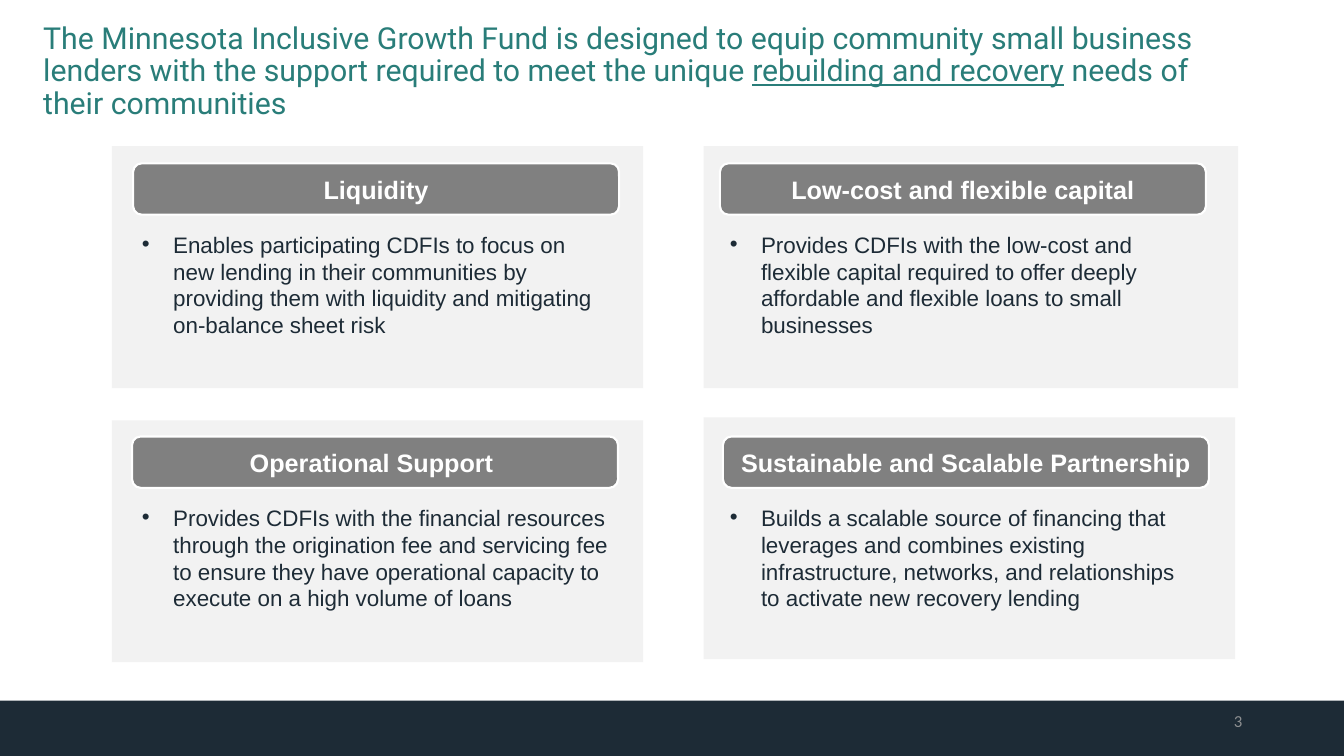
"""Build the slide on the four benefits of the Minnesota Inclusive Growth Fund."""
from dataclasses import dataclass

from lxml import etree
from pptx import Presentation
from pptx.dml.color import RGBColor
from pptx.enum.shapes import MSO_SHAPE as Shape
from pptx.enum.text import MSO_ANCHOR as Anchor, PP_ALIGN as Align
from pptx.oxml.ns import qn
from pptx.util import Inches, Pt


@dataclass(frozen=True)
class Theme:
    navy: str = "1D2B36"
    teal: str = "297D79"
    panel: str = "F2F2F2"
    header: str = "808080"
    white: str = "FFFFFF"
    number: str = "8D8F91"
    title_size: float = 21.6
    header_size: int = 18
    body_size: int = 16
    number_size: int = 12


theme = Theme()


def add_block(page, kind, place, fill):
    """Add a flat filled shape without an outline."""
    block = page.shapes.add_shape(kind, *map(Inches, place))
    block.shadow.inherit = False
    block.fill.solid()
    block.fill.fore_color.rgb = RGBColor.from_string(fill)
    block.line.fill.background()
    return block


def style_font(font, name, size, color):
    """Set the typeface, size and colour of a font."""
    font.name = name
    font.size = Pt(size)
    font.color.rgb = RGBColor.from_string(color)


deck = Presentation()
deck.slide_width, deck.slide_height = Inches(13.33), Inches(7.5)
page = deck.slides.add_slide(deck.slide_layouts[6])

add_block(page, Shape.RECTANGLE, (0, 6.95, 13.33, 0.55), theme.navy)

title = page.shapes.add_textbox(Inches(0.33), Inches(0.18), Inches(12.09), Inches(0.89))
title.text_frame.word_wrap = True
para = title.text_frame.paragraphs[0]
para.line_spacing = 0.9
title_parts = [
    ("The Minnesota Inclusive Growth Fund is designed to equip community small business "
     "lenders with the support required to meet the unique ", False),
    ("rebuilding and recovery", True),
    (" needs of their communities", False),
]
for words, underlined in title_parts:
    span = para.add_run()
    span.text = words
    style_font(span.font, "Roboto", theme.title_size, theme.teal)
    span.font.underline = underlined

number = page.shapes.add_textbox(Inches(9.42), Inches(6.95), Inches(3), Inches(0.4))
number.text_frame.word_wrap = True
number.text_frame.vertical_anchor = Anchor.MIDDLE
para = number.text_frame.paragraphs[0]
para.text = "3"
para.alignment = Align.RIGHT
style_font(para.runs[0].font, "Calibri", theme.number_size, theme.number)

cards = [
    ("Liquidity",
     "Enables participating CDFIs to focus on new lending in their communities by "
     "providing them with liquidity and mitigating on-balance sheet risk",
     (1.11, 1.45, 5.27), (1.32, 1.62), (1.31, 2.24)),
    ("Low-cost and flexible capital",
     "Provides CDFIs with the low-cost and flexible capital required to offer deeply "
     "affordable and flexible loans to small businesses",
     (6.98, 1.45, 5.3), (7.14, 1.62), (7.14, 2.24)),
    ("Operational Support ",
     "Provides CDFIs with the financial resources through the origination fee and "
     "servicing fee to ensure they have operational capacity to execute on a high "
     "volume of loans",
     (1.11, 4.17, 5.27), (1.31, 4.33), (1.31, 4.95)),
    ("Sustainable and Scalable Partnership",
     "Builds a scalable source of financing that leverages and combines existing "
     "infrastructure, networks, and relationships to activate new recovery lending",
     (6.98, 4.14, 5.27), (7.17, 4.33), (7.14, 4.95)),
]
for heading, benefit, panel_place, header_corner, body_corner in cards:
    add_block(page, Shape.RECTANGLE, (*panel_place, 2.4), theme.panel)

    header = add_block(page, Shape.ROUNDED_RECTANGLE, (*header_corner, 4.82, 0.51), theme.header)
    header.adjustments[0] = 0.167
    header.line.color.rgb = RGBColor.from_string(theme.white)
    header.line.width = Pt(1.5)
    header.text_frame.word_wrap = True
    header.text_frame.vertical_anchor = Anchor.MIDDLE
    para = header.text_frame.paragraphs[0]
    para.text = heading
    para.alignment = Align.CENTER
    style_font(para.runs[0].font, "Arial", theme.header_size, theme.white)
    para.runs[0].font.bold = True

    body = page.shapes.add_textbox(*map(Inches, (*body_corner, 4.84, 1.18)))
    body.text_frame.word_wrap = True
    para = body.text_frame.paragraphs[0]
    para.text = benefit
    para.space_after = Pt(6)
    settings = para._p.get_or_add_pPr()
    settings.set("marL", str(Inches(0.31)))
    settings.set("indent", str(Inches(-0.31)))
    etree.SubElement(settings, qn("a:buFont"), typeface="Arial")
    etree.SubElement(settings, qn("a:buChar"), char="•")
    style_font(para.runs[0].font, "Arial", theme.body_size, theme.navy)

deck.save("out.pptx")
